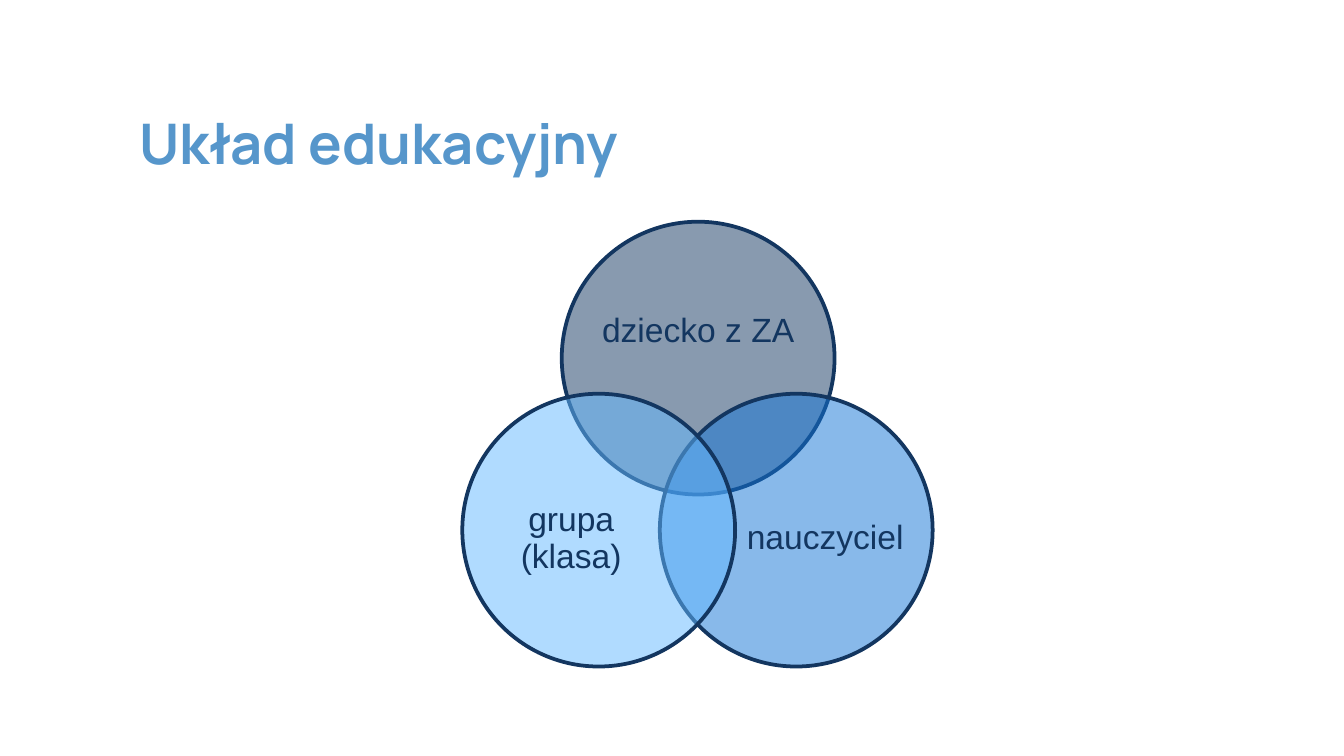
"""Build a slide with a three-circle diagram of the educational system."""
from lxml import etree
from pptx import Presentation
from pptx import util as u
from pptx.dml.color import RGBColor
from pptx.enum import shapes, text
from pptx.oxml.ns import qn

COLORS = {
    "title": "5696CB",
    "navy": "133660",
    "blue": "1375D7",
    "sky": "63B8FF",
}
DIAMETER = 2.03
CIRCLES = [
    ("dziecko z ZA", "navy", (4.18, 1.65), (4.45, 2.01, 1.49, 0.91)),
    ("nauczyciel", "blue", (4.91, 2.93), (5.53, 3.45, 1.22, 1.12)),
    ("grupa (klasa)", "sky", (3.44, 2.93), (3.64, 3.45, 1.22, 1.12)),
]


def color(name):
    """Return the named colour."""
    return RGBColor.from_string(COLORS[name])


def add_text(page, words, area, font, size, color_name, inset=0.0, bold=False):
    """Add a vertically centred text box and return its paragraph."""
    box = page.shapes.add_textbox(*map(u.Inches, area))
    frame = box.text_frame
    frame.word_wrap = True
    frame.vertical_anchor = text.MSO_ANCHOR.MIDDLE
    frame.margin_left = frame.margin_right = u.Inches(inset)
    frame.margin_top = frame.margin_bottom = u.Inches(inset)
    para = frame.paragraphs[0]
    span = para.add_run()
    span.text = words
    span.font.name = font
    span.font.size = u.Pt(size)
    span.font.bold = bold
    span.font.color.rgb = color(color_name)
    return para


def add_circle(page, left, top, fill_name):
    """Add a half-transparent circle with a navy outline."""
    circle = page.shapes.add_shape(
        shapes.MSO_SHAPE.OVAL, *map(u.Inches, (left, top, DIAMETER, DIAMETER)))
    circle.shadow.inherit = False
    circle.fill.solid()
    circle.fill.fore_color.rgb = color(fill_name)
    fill = circle.element.spPr.find(qn("a:solidFill"))
    etree.SubElement(fill[0], qn("a:alpha"), val="50000")
    circle.line.color.rgb = color("navy")
    circle.line.width = u.Pt(2)


def add_label(page, words, area):
    """Add the centred label of a circle."""
    para = add_text(page, words, area, "Arial", 18, "navy")
    para.alignment = text.PP_ALIGN.CENTER
    para.line_spacing = 0.9


def main():
    """Build and save the deck."""
    deck = Presentation()
    deck.slide_width = u.Inches(10)
    deck.slide_height = u.Inches(10 * 9 / 16)
    page = deck.slides.add_slide(deck.slide_layouts[6])
    add_text(page, "Układ edukacyjny", (0.94, 0.5, 8.1, 1.11),
             "Manrope", 30, "title", inset=0.1, bold=True)
    for words, fill_name, corner, area in CIRCLES:
        add_circle(page, *corner, fill_name)
        add_label(page, words, area)
    deck.save("out.pptx")


if __name__ == "__main__":
    main()
